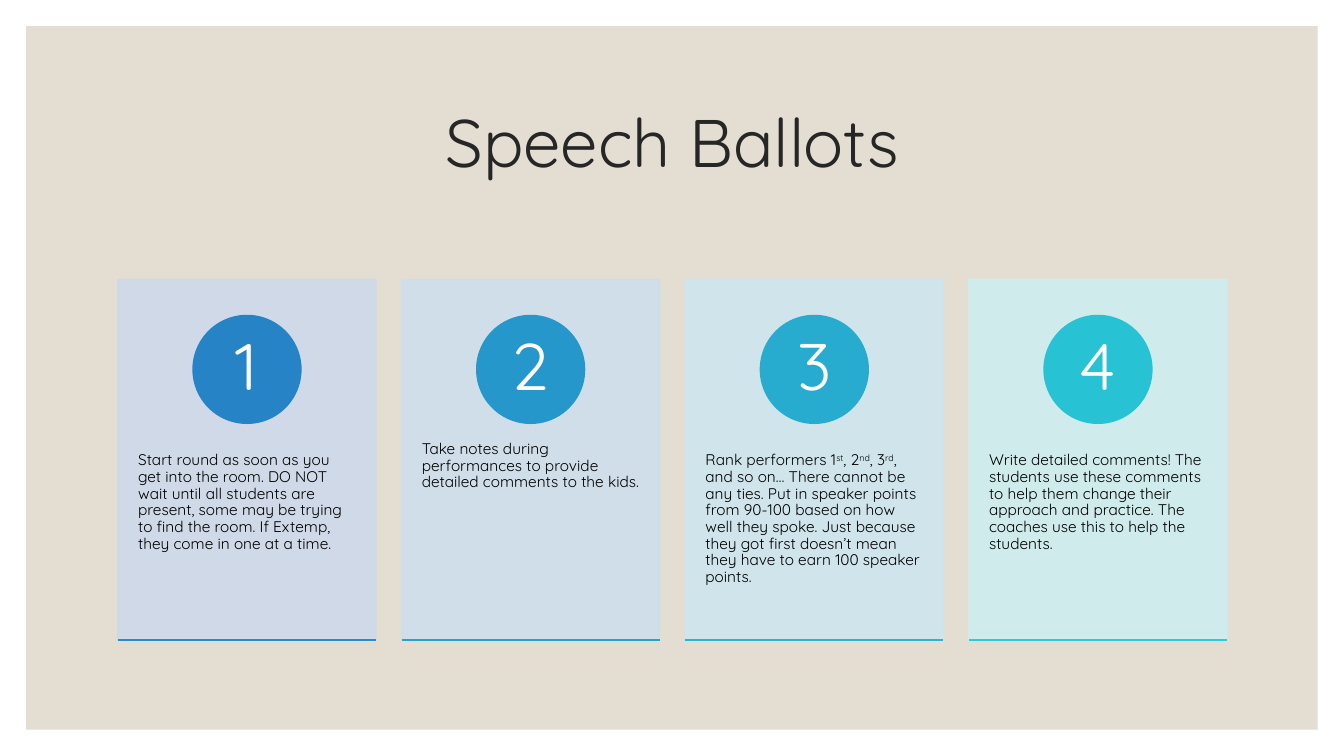
"""Build the Speech Ballots slide: a title above four numbered cards."""
from lxml.etree import SubElement
from pptx import Presentation
from pptx.dml.color import RGBColor as Rgb
from pptx.enum.shapes import MSO_CONNECTOR as Connector, MSO_SHAPE as Shape
from pptx.enum.text import MSO_ANCHOR as Anchor, PP_ALIGN as Align
from pptx.oxml.ns import qn
from pptx.util import Inches, Pt

SLIDE_WIDTH, SLIDE_HEIGHT = 13.33, 7.5
FRAME = 0.26
CONTENT_LEFT, CONTENT_WIDTH = 1.17, 11
CARD_TOP, CARD_WIDTH, CARD_HEIGHT = 2.77, 2.56, 3.58
BADGE_TOP, BADGE_SIZE = 3.13, 1.07
BODY_TOP, BODY_HEIGHT = 4.13, 2.15
FONT = "Quicksand"
COLORS = {"panel": "E3DED1", "title": "262626", "body": "000000", "number": "FFFFFF"}
CARDS = [
    {"card": "CDD9EA", "badge": "2683C6", "rule": "268DC8", "text": [
        "Start round as soon as you get into the room. DO NOT wait until all students "
        "are present, some may be trying to find the room. If Extemp, they come in one "
        "at a time."]},
    {"card": "CDDFEC", "badge": "2697CB", "rule": "26A2CD", "text": [
        "Take notes during performances to provide detailed comments to the kids."]},
    {"card": "CDE5EE", "badge": "27ACD0", "rule": "27B7D2", "text": [
        "Rank performers 1", "st", ", 2", "nd", ", 3", "rd",
        ", and so on… There cannot be any ties. Put in speaker points from 90-100 based "
        "on how well they spoke. Just because they got first doesn’t mean they have to "
        "earn 100 speaker points."]},
    {"card": "CDEDF0", "badge": "27C3D5", "rule": "27CED7", "text": [
        "Write detailed comments! The students use these comments to help them change "
        "their approach and practice. The coaches use this to help the students."]},
]
CARD_PITCH = (CONTENT_WIDTH - CARD_WIDTH) / (len(CARDS) - 1)


def inches(*lengths):
    return [Inches(length) for length in lengths]


def add_filled(slide, kind, box, color, outlined=True, opacity=100):
    shape = slide.shapes.add_shape(kind, *inches(*box))
    shape.shadow.inherit = False
    shape.fill.solid()
    shape.fill.fore_color.rgb = Rgb.from_string(color)
    if outlined:
        shape.line.color.rgb = Rgb.from_string(color)
        shape.line.width = Pt(1)
    else:
        shape.line.fill.background()
    if opacity < 100:
        for color_element in shape._element.spPr.iter(qn("a:srgbClr")):
            SubElement(color_element, qn("a:alpha"), val=str(opacity * 1000))
    return shape


def add_rule(slide, left, top, width, color):
    rule = slide.shapes.add_connector(
        Connector.STRAIGHT, *inches(left, top, left + width, top))
    rule.line.color.rgb = Rgb.from_string(color)
    rule.line.width = Pt(1)
    SubElement(rule._element.spPr, qn("a:effectLst"))


def write_text(shape, pieces, size, color, insets, align=Align.LEFT, anchor=Anchor.TOP):
    frame = shape.text_frame
    frame.word_wrap = True
    frame.vertical_anchor = anchor
    horizontal, vertical = inches(*insets)
    frame.margin_left = frame.margin_right = horizontal
    frame.margin_top = frame.margin_bottom = vertical
    paragraph = frame.paragraphs[0]
    paragraph.alignment = align
    paragraph.line_spacing = 0.9
    for index, piece in enumerate(pieces):
        run = paragraph.add_run()
        run.text = piece
        run.font.name = FONT
        run.font.size = Pt(size)
        run.font.color.rgb = Rgb.from_string(color)
        if index % 2:
            run._r.get_or_add_rPr().set("baseline", "30000")


def add_card(slide, number, card):
    left = CONTENT_LEFT + (number - 1) * CARD_PITCH
    add_filled(slide, Shape.RECTANGLE, (left, CARD_TOP, CARD_WIDTH, CARD_HEIGHT),
               card["card"], opacity=90)
    body = slide.shapes.add_textbox(*inches(left, BODY_TOP, CARD_WIDTH, BODY_HEIGHT))
    write_text(body, card["text"], 11, COLORS["body"], (0.2, 0.36))
    badge_left = left + (CARD_WIDTH - BADGE_SIZE) / 2
    badge = add_filled(slide, Shape.OVAL, (badge_left, BADGE_TOP, BADGE_SIZE, BADGE_SIZE),
                       card["badge"])
    write_text(badge, [str(number)], 47, COLORS["number"], (0.08, 0.01),
               Align.CENTER, Anchor.MIDDLE)
    add_rule(slide, left, CARD_TOP + CARD_HEIGHT, CARD_WIDTH, card["rule"])


def main():
    presentation = Presentation()
    presentation.slide_width, presentation.slide_height = inches(SLIDE_WIDTH, SLIDE_HEIGHT)
    slide = presentation.slides.add_slide(presentation.slide_layouts[6])
    panel_box = (FRAME, FRAME, SLIDE_WIDTH - 2 * FRAME, SLIDE_HEIGHT - 2 * FRAME)
    add_filled(slide, Shape.RECTANGLE, panel_box, COLORS["panel"], outlined=False)
    title = slide.shapes.add_textbox(*inches(CONTENT_LEFT, 0.7, CONTENT_WIDTH, 1.5))
    write_text(title, ["Speech Ballots"], 48, COLORS["title"], (0.1, 0.05),
               Align.CENTER, Anchor.MIDDLE)
    for number, card in enumerate(CARDS, start=1):
        add_card(slide, number, card)
    presentation.save("out.pptx")


if __name__ == "__main__":
    main()
